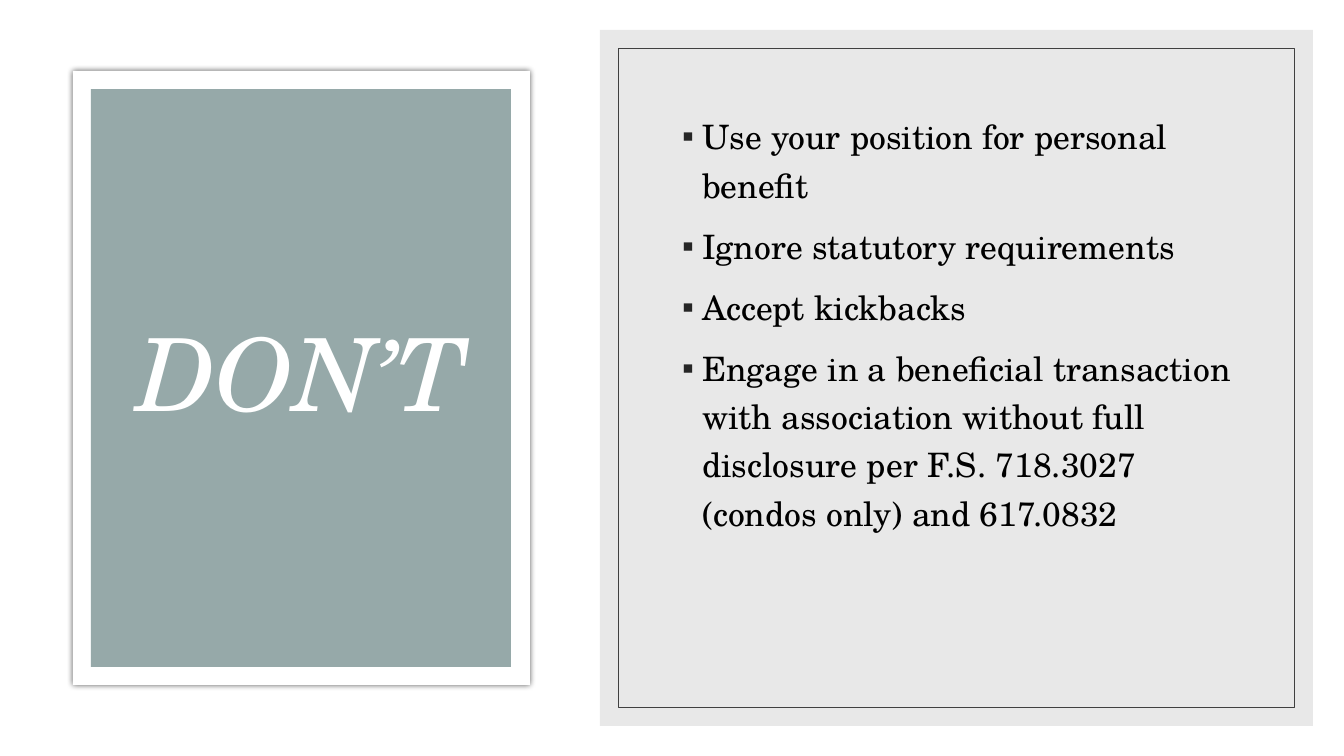
"""Build the DON'T slide: a framed title card beside a bulleted panel."""
from lxml.etree import SubElement
from pptx import Presentation
from pptx.dml.color import RGBColor
from pptx.enum.shapes import MSO_SHAPE
from pptx.enum.text import MSO_ANCHOR, MSO_AUTO_SIZE, PP_ALIGN
from pptx.oxml.ns import qn
from pptx.util import Pt

WHITE = RGBColor(0xFF, 0xFF, 0xFF)
BLACK = RGBColor(0x00, 0x00, 0x00)
SAGE = RGBColor(0x96, 0xA9, 0xA9)
GREY = RGBColor(0xD9, 0xD9, 0xD9)
CHARCOAL = RGBColor(0x40, 0x40, 0x40)
BULLET = RGBColor(0x26, 0x26, 0x26)
FONT = "TeX Gyre Schola"
EMU_PER_PX = 914400 / 100.8
SIZE = (1344, 756)
INDENT = 20

TITLE = "DON’T"
TITLE_BOX = (109, 131, 385, 495)
RULES = [
    "Use your position for personal benefit",
    "Ignore statutory requirements",
    "Accept kickbacks",
    "Engage in a beneficial transaction with association without full "
    "disclosure per F.S. 718.3027 (condos only) and 617.0832",
]
RULES_BOX = (672, 103, 571, 549)
PANELS = [
    {"box": (0, 0, *SIZE), "fill": WHITE},
    {"box": (73, 71, 457, 614), "fill": WHITE, "shadow": True},
    {"box": (91, 89, 420, 578), "fill": SAGE},
    {"box": (600, 30, 713, 696), "fill": GREY, "opacity": 60},
    {"box": (618, 48, 676, 659), "line": CHARCOAL},
]


def px(length):
    return round(length * EMU_PER_PX)


def add_panel(page, box, fill=None, line=None, opacity=None, shadow=False):
    panel = page.shapes.add_shape(MSO_SHAPE.RECTANGLE, *map(px, box))
    panel.shadow.inherit = False
    if fill is None:
        panel.fill.background()
    else:
        panel.fill.solid()
        panel.fill.fore_color.rgb = fill
    if line is None:
        panel.line.fill.background()
    else:
        panel.line.color.rgb = line
        panel.line.width = Pt(0.5)
    properties = panel.element.spPr
    if opacity:
        color = properties.find(".//" + qn("a:srgbClr"))
        SubElement(color, qn("a:alpha"), val=str(opacity * 1000))
    if shadow:
        effects = properties.find(qn("a:effectLst"))
        outer = SubElement(effects, qn("a:outerShdw"), blurRad=str(Pt(4)),
                           dist="0", dir="0", algn="ctr", rotWithShape="0")
        color = SubElement(outer, qn("a:srgbClr"), val=str(BLACK))
        SubElement(color, qn("a:alpha"), val="66000")


def add_bullet(para):
    properties = para._p.get_or_add_pPr()
    properties.set("marL", str(px(INDENT)))
    properties.set("indent", str(-px(INDENT)))
    color = SubElement(properties, qn("a:buClr"))
    SubElement(color, qn("a:srgbClr"), val=str(BULLET))
    SubElement(properties, qn("a:buFont"), typeface="Arial")
    SubElement(properties, qn("a:buChar"), char="▪")


def write_text(holder, lines, box, size, color, align, anchor, spacing,
               before=0, italic=False, bullets=False):
    holder.left, holder.top, holder.width, holder.height = map(px, box)
    frame = holder.text_frame
    frame.word_wrap = True
    frame.auto_size = MSO_AUTO_SIZE.NONE
    frame.vertical_anchor = anchor
    frame.text = "\n".join(lines)
    for para in frame.paragraphs:
        para.alignment = align
        para.line_spacing = spacing
        para.space_before = Pt(before)
        if bullets:
            add_bullet(para)
        for span in para.runs:
            span.font.name = FONT
            span.font.size = Pt(size)
            span.font.italic = italic
            span.font.color.rgb = color


def main():
    deck = Presentation()
    deck.slide_width, deck.slide_height = map(px, SIZE)
    page = deck.slides.add_slide(deck.slide_layouts[1])
    title, rules = page.placeholders
    for panel in PANELS:
        add_panel(page, **panel)
    page.shapes[-1].element.addnext(title.element)
    title.element.addnext(rules.element)
    write_text(title, [TITLE], TITLE_BOX, size=72, color=WHITE, italic=True,
               align=PP_ALIGN.CENTER, anchor=MSO_ANCHOR.MIDDLE, spacing=0.9)
    write_text(rules, RULES, RULES_BOX, size=24, color=BLACK, bullets=True,
               align=PP_ALIGN.LEFT, anchor=MSO_ANCHOR.TOP, spacing=1.2, before=9)
    deck.save("out.pptx")


if __name__ == "__main__":
    main()
